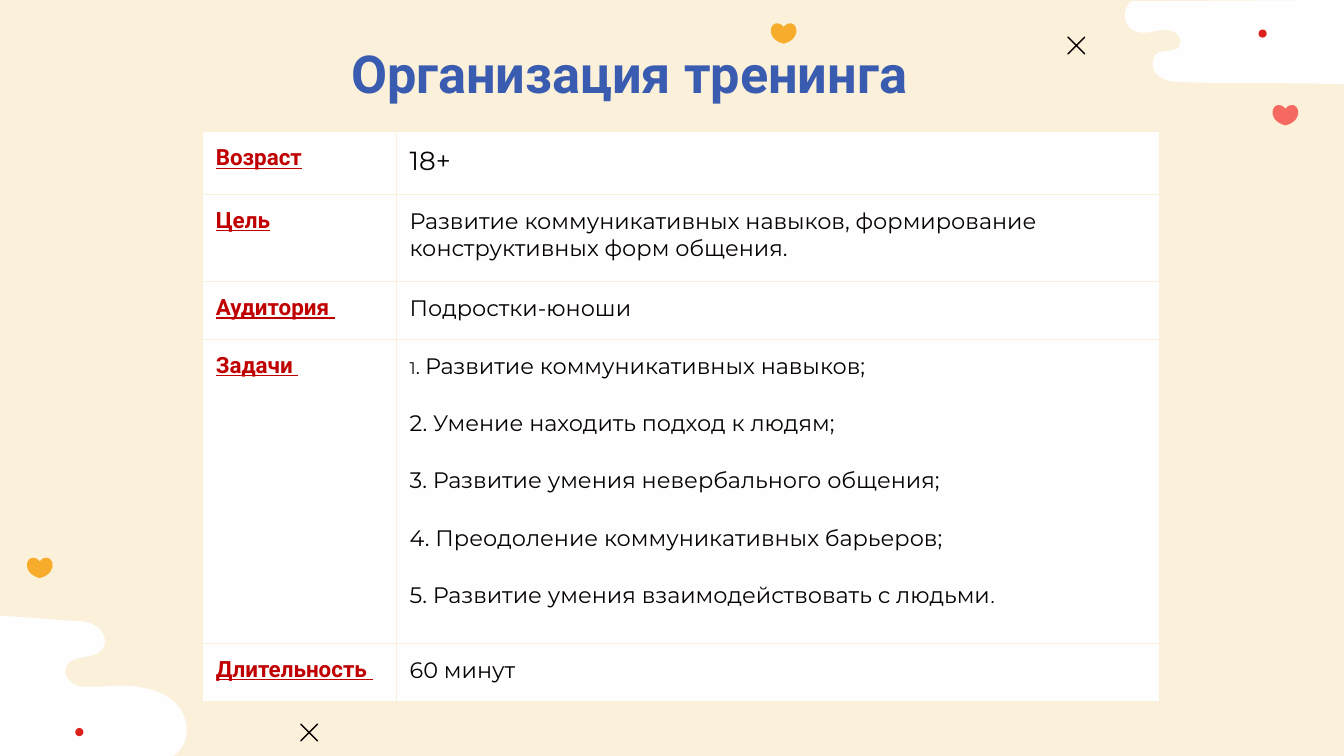
from lxml.etree import SubElement
from pptx import Presentation
from pptx.dml.color import RGBColor
from pptx.enum.shapes import MSO_SHAPE as Preset
from pptx.enum.text import MSO_ANCHOR as Anchor, PP_ALIGN as Align
from pptx.oxml.ns import qn
from pptx.util import Pt

COLORS = {
    "cream": "FBF0DA", "white": "FFFEFF", "amber": "F7AC2C", "coral": "F56960",
    "red": "DC211D", "ink": "060201", "blue": "395BB0", "label": "C00000",
}
LOWER_CLOUD = [
    [(97.9, 382.3)],
    [(94.3, 374.4), (85.7, 370.1), (77, 368.6)],
    [(68.4, 366.5), (59, 367.9), (50.4, 367.9)],
    [(46.8, 367.9), (43.2, 368.6), (39.6, 366.5)],
    [(36.7, 365), (33.8, 361.4), (35.3, 357.8)],
    [(36, 354.2), (41, 352.8), (44.6, 352.1)],
    [(49, 351.4), (53.3, 350.6), (55.4, 347)],
    [(57.6, 343.4), (55.4, 338.4), (51.8, 335.5)],
    [(48.2, 333.4), (43.9, 332.6), (39.6, 332.6)],
    [(25.9, 331.9), (12.2, 330.5), (-1.4, 329.8)],
    [(-1.4, 355.7), (-2.2, 381.6), (-2.2, 407.5)],
    [(92.2, 405.4)],
    [(100.1, 401), (102.2, 390.2), (97.9, 382.3)],
]
UPPER_CLOUD = [
    [(721.4, 0)],
    [(606.2, 0.7)],
    [(603.4, 2.9), (601.9, 6.5), (602.6, 10.1)],
    [(603.4, 13.7), (606.2, 16.6), (609.8, 17.3)],
    [(612.7, 18), (616.3, 17.3), (619.2, 16.6)],
    [(622.8, 15.8), (626.4, 15.8), (629.3, 17.3)],
    [(632.2, 18.7), (633.6, 23), (631.4, 25.2)],
    [(628.6, 28.1), (624.2, 26.6), (620.6, 28.1)],
    [(617.8, 29.5), (617, 33.8), (617.8, 36.7)],
    [(619.2, 40.3), (622.1, 41.8), (625.7, 43.2)],
    [(628.6, 43.9), (632.2, 43.9), (635, 43.9)],
    [(646.6, 44.6), (657.4, 44.6), (668.2, 44.6)],
    [(686.9, 44.6), (704.9, 44.6), (723.6, 45.4)],
    [(722.9, 30.2), (722.2, 15.1), (721.4, 0)],
]
HEART = [[(0, 0)], [(-6, -6.8), (-12, 5.8), (0, 9)], [(12, 5.8), (6, -6.8), (0, 0)]]
LABEL = {"font": "Roboto", "color": "label", "bold": True, "underline": True}
ROWS = [
    (33.6, "Возраст", [[("18+", 14)]]),
    (46.7, "Цель", [[("Развитие коммуникативных навыков, формирование "
                      "конструктивных форм общения.", 12)]]),
    (31, "Аудитория ", [[("Подростки-юноши", 12)]]),
    (162.9, "Задачи ", [
        [("1", 9), (". ", 10.5), ("Развитие коммуникативных навыков;", 12)],
        [("2. Умение находить подход к людям;", 12)],
        [("3. Развитие умения невербального общения;", 12)],
        [("4. Преодоление коммуникативных барьеров;", 12)],
        [("5. Развитие умения взаимодействовать с людьми", 12), (".", 10.5)],
    ]),
    (31, "Длительность ", [[("60 минут", 12)]]),
]


def rgb(name):
    """Return the named colour."""
    return RGBColor.from_string(COLORS[name])


def add_text(paragraph, text, size=12, font="Montserrat", color="ink", bold=False, underline=False):
    """Append a formatted run to a paragraph."""
    run = paragraph.add_run()
    run.text = text
    run.font.size = Pt(size)
    run.font.name = font
    run.font.bold = bold
    run.font.underline = underline
    run.font.color.rgb = rgb(color)


def paint(shape, color, line=None):
    """Fill a shape and outline it only when a line colour is given."""
    shape.shadow.inherit = False
    shape.fill.solid()
    shape.fill.fore_color.rgb = rgb(color)
    if line:
        shape.line.color.rgb = rgb(line)
        shape.line.width = Pt(0.75)
    else:
        shape.line.fill.background()


def add_outline(slide, segments, box, color, offset=(0, 0)):
    """Draw a closed outline of lines and cubic curves within its bounds."""
    left, top, width, height = box
    x, y = Pt(left + offset[0]), Pt(top + offset[1])
    right, bottom = x + Pt(width), y + Pt(height)
    builder = slide.shapes.build_freeform(x, y)
    builder.add_line_segments([(right, y), (right, bottom), (x, bottom)])
    shape = builder.convert_to_shape()
    contour = shape._element.find(".//" + qn("a:path"))
    for child in list(contour):
        contour.remove(child)
    for index, segment in enumerate(segments):
        kind = "moveTo" if index == 0 else "lnTo" if len(segment) == 1 else "cubicBezTo"
        command = SubElement(contour, qn("a:" + kind))
        for point_x, point_y in segment:
            SubElement(command, qn("a:pt"), x=str(Pt(point_x - left)), y=str(Pt(point_y - top)))
    SubElement(contour, qn("a:close"))
    paint(shape, color)


def add_dot(slide, left, top):
    """Draw a small red dot."""
    paint(slide.shapes.add_shape(Preset.OVAL, Pt(left), Pt(top), Pt(4.4), Pt(4.4)), "red")


def add_cross(slide, left, top):
    """Draw a thin cross."""
    shape = slide.shapes.add_shape(Preset.MATH_MULTIPLY, Pt(left), Pt(top), Pt(17.3), Pt(17.3))
    shape.adjustments[0] = 0
    paint(shape, "ink", line="ink")


def add_title(slide, text):
    """Add the centred heading."""
    frame = slide.shapes.add_textbox(Pt(34), Pt(15), Pt(606), Pt(45.4)).text_frame
    frame.word_wrap = True
    frame.vertical_anchor = Anchor.TOP
    frame.margin_left = frame.margin_right = frame.margin_top = frame.margin_bottom = Pt(7.2)
    frame.paragraphs[0].alignment = Align.CENTER
    add_text(frame.paragraphs[0], text, size=28, font="Roboto", color="blue", bold=True)


def format_cell(cell):
    """Set a cell's margins, borders and fill."""
    cell.margin_left = cell.margin_right = cell.margin_top = cell.margin_bottom = Pt(7.2)
    properties = cell._tc.get_or_add_tcPr()
    for side in ("lnL", "lnR", "lnT", "lnB"):
        border = SubElement(properties, qn("a:" + side), w=str(Pt(0.75)))
        fill = SubElement(border, qn("a:solidFill"))
        SubElement(fill, qn("a:srgbClr"), val=COLORS["cream"])
    cell.fill.solid()
    cell.fill.fore_color.rgb = rgb("white")


def add_training_table(slide):
    """Add the table of training details."""
    height = sum(row[0] for row in ROWS)
    table = slide.shapes.add_table(len(ROWS), 2, Pt(108.4), Pt(70.5), Pt(512.6), Pt(height)).table
    table.first_row = table.horz_banding = False
    table.columns[0].width, table.columns[1].width = Pt(103.9), Pt(408.7)
    for index, (row_height, label, lines) in enumerate(ROWS):
        table.rows[index].height = Pt(row_height)
        name_cell, detail_cell = table.cell(index, 0), table.cell(index, 1)
        format_cell(name_cell)
        format_cell(detail_cell)
        add_text(name_cell.text_frame.paragraphs[0], label, **LABEL)
        frame = detail_cell.text_frame
        for number, runs in enumerate(lines):
            paragraph = frame.add_paragraph() if number else frame.paragraphs[0]
            paragraph.space_after = Pt(0 if index == len(ROWS) - 1 else 16)
            for text, size in runs:
                add_text(paragraph, text, size=size)


def main():
    """Build the training slide and save it."""
    presentation = Presentation()
    presentation.slide_width, presentation.slide_height = Pt(720), Pt(405)
    slide = presentation.slides.add_slide(presentation.slide_layouts[6])
    slide.background.fill.solid()
    slide.background.fill.fore_color.rgb = rgb("cream")
    add_outline(slide, LOWER_CLOUD, (-2.2, 329.8, 102.2, 78), "white")
    add_outline(slide, UPPER_CLOUD, (602.6, 0, 121, 45.4), "white")
    for x, y, color in ((419.8, 14.4, "amber"), (21.3, 300.7, "amber"), (688.6, 58.2, "coral")):
        add_outline(slide, HEART, (-6.9, -1.9, 13.8, 10.9), color, offset=(x, y))
    for left, top in ((674.2, 15.8), (40.3, 390)):
        add_dot(slide, left, top)
    for left, top in ((568, 15.8), (157, 383.8)):
        add_cross(slide, left, top)
    add_title(slide, "Организация тренинга")
    add_training_table(slide)
    presentation.save("out.pptx")


if __name__ == "__main__":
    main()
